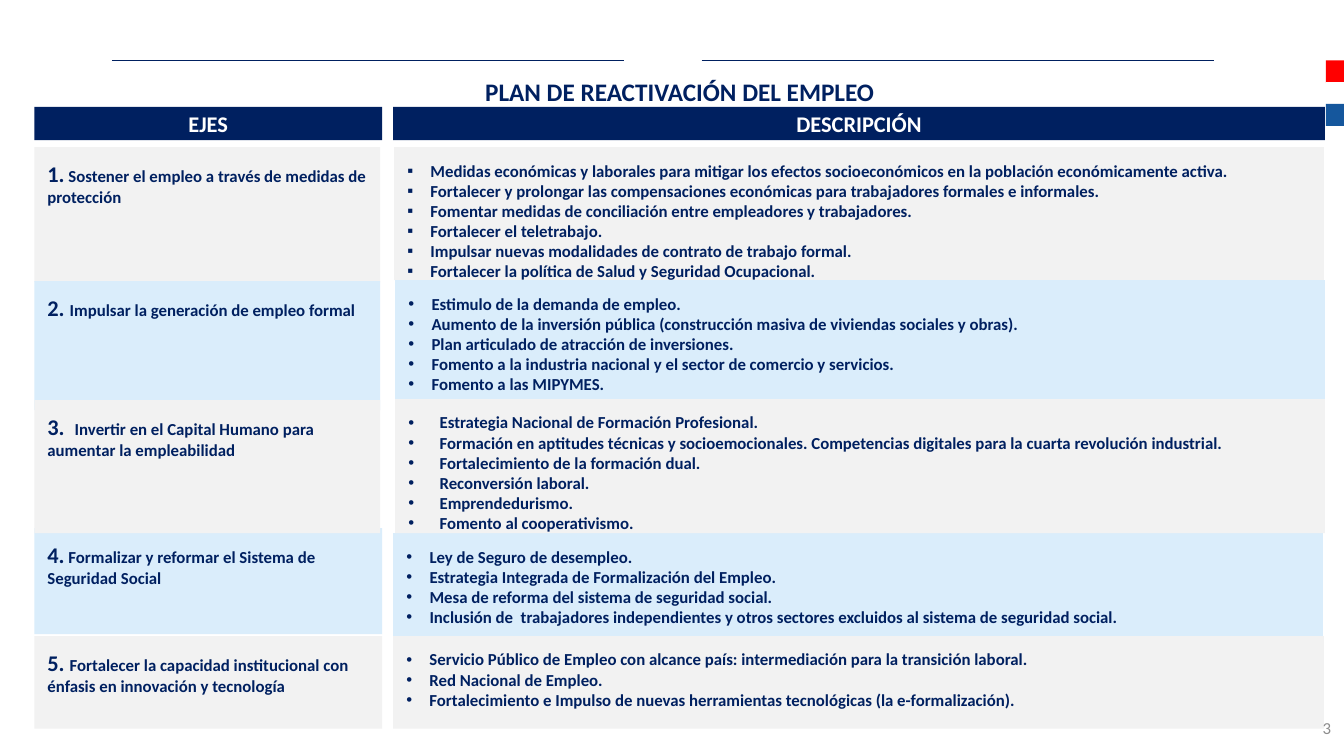
"""Build the employment reactivation plan slide."""
from dataclasses import dataclass

from lxml import etree
from pptx import Presentation
from pptx.dml.color import RGBColor
from pptx.enum import shapes, text
from pptx.oxml import ns
from pptx.util import Inches, Pt


@dataclass(frozen=True)
class Theme:
    """Colours, font and type sizes of the slide."""
    navy: str = "002060"
    pale_blue: str = "DAEDFB"
    pale_grey: str = "F2F2F2"
    white: str = "FFFFFF"
    red: str = "FF0000"
    flag_blue: str = "15579D"
    muted: str = "8C8C8C"
    font: str = "Calibri"
    title: int = 18
    heading: int = 16
    body: int = 12


@dataclass(frozen=True)
class Area:
    """Left, top, width and height in inches."""
    left: float
    top: float
    width: float
    height: float

    def lengths(self) -> list:
        """Return the four measures as lengths."""
        return [Inches(value) for value in (self.left, self.top, self.width, self.height)]


@dataclass(frozen=True)
class Axis:
    """One row of the plan: its heading and its measures."""
    number: str
    heading: str
    fill: str
    heading_area: Area
    measures_area: Area
    measures: tuple
    bullet: str = "•"
    indent: float = 0.23


THEME = Theme()
INSET = 0.13
AXES = (
    Axis("4.", " Formalizar y reformar el Sistema de Seguridad Social", THEME.pale_blue,
         Area(0.34, 5.24, 3.45, 1.05), Area(3.9, 5.29, 9.22, 1.02),
         ("Ley de Seguro de desempleo.",
          "Estrategia Integrada de Formalización del Empleo.",
          "Mesa de reforma del sistema de seguridad social.",
          "Inclusión de  trabajadores independientes y otros sectores excluidos "
          "al sistema de seguridad social.")),
    Axis("1.", " Sostener el empleo a través de medidas de protección", THEME.pale_grey,
         Area(0.34, 1.46, 3.43, 1.34), Area(3.91, 1.46, 9.22, 1.32),
         ("Medidas económicas y laborales para mitigar los efectos socioeconómicos "
          "en la población económicamente activa.",
          "Fortalecer y prolongar las compensaciones económicas para trabajadores "
          "formales e informales.",
          "Fomentar medidas de conciliación entre empleadores y trabajadores.",
          "Fortalecer el teletrabajo.",
          "Impulsar nuevas modalidades de contrato de trabajo formal.",
          "Fortalecer la política de Salud y Seguridad Ocupacional."),
         bullet="▪"),
    Axis("2. ", "Impulsar la generación de empleo formal", THEME.pale_blue,
         Area(0.34, 2.79, 3.43, 1.28), Area(3.92, 2.78, 9.22, 1.19),
         ("Estimulo de la demanda de empleo.",
          "Aumento de la inversión pública (construcción masiva de viviendas sociales y obras).",
          "Plan articulado de atracción de inversiones.",
          "Fomento a la industria nacional y el sector de comercio y servicios.",
          "Fomento a las MIPYMES.")),
    Axis("3.  ", "Invertir en el Capital Humano para aumentar la empleabilidad", THEME.pale_grey,
         Area(0.34, 3.97, 3.43, 1.32), Area(3.92, 3.96, 9.22, 1.33),
         ("Estrategia Nacional de Formación Profesional.",
          "Formación en aptitudes técnicas y socioemocionales. Competencias digitales "
          "para la cuarta revolución industrial.",
          "Fortalecimiento de la formación dual.",
          "Reconversión laboral.",
          "Emprendedurismo.",
          "Fomento al cooperativismo."),
         indent=0.31),
    Axis("5. ", "Fortalecer la capacidad institucional con énfasis en innovación y tecnología",
         THEME.pale_grey, Area(0.34, 6.31, 3.45, 0.92), Area(3.9, 6.31, 9.23, 0.92),
         ("Servicio Público de Empleo con alcance país: intermediación para la transición laboral.",
          "Red Nacional de Empleo.",
          "Fortalecimiento e Impulso de nuevas herramientas tecnológicas (la e-formalización).")),
)
HEADERS = (("EJES", Area(0.34, 1.06, 3.45, 0.33)),
           ("DESCRIPCIÓN", Area(3.9, 1.06, 9.24, 0.33)))


def style_span(span, size: int, color: str = THEME.navy, bold: bool = True) -> None:
    """Set the font of one run."""
    span.font.name = THEME.font
    span.font.size = Pt(size)
    span.font.bold = bold
    span.font.color.rgb = RGBColor.from_string(color)


def add_box(page, area: Area, fill: str):
    """Draw a flat rectangle with its text starting at the top left."""
    box = page.shapes.add_shape(shapes.MSO_SHAPE.RECTANGLE, *area.lengths())
    box.shadow.inherit = False
    box.fill.solid()
    box.fill.fore_color.rgb = RGBColor.from_string(fill)
    box.line.fill.background()
    frame = box.text_frame
    frame.word_wrap = True
    frame.vertical_anchor = text.MSO_ANCHOR.TOP
    frame.margin_left = frame.margin_right = Inches(INSET)
    frame.margin_top = frame.margin_bottom = Inches(INSET)
    frame.paragraphs[0].alignment = text.PP_ALIGN.LEFT
    return box


def set_line(frame, words: str, align, size: int, color: str, bold: bool = True) -> None:
    """Fill a frame with one vertically centred line."""
    frame.text = words
    frame.word_wrap = True
    frame.vertical_anchor = text.MSO_ANCHOR.MIDDLE
    para = frame.paragraphs[0]
    para.alignment = align
    style_span(para.runs[0], size, color, bold)


def add_label(page, area: Area, words: str, align, size: int, color: str, bold: bool) -> None:
    """Add a text box with one line."""
    box = page.shapes.add_textbox(*area.lengths())
    set_line(box.text_frame, words, align, size, color, bold)


def set_bullet(para, bullet: str, indent: float) -> None:
    """Give a paragraph a bullet and a hanging indent."""
    properties = para._p.get_or_add_pPr()
    properties.set("marL", str(Inches(indent)))
    properties.set("indent", str(-Inches(indent)))
    etree.SubElement(properties, ns.qn("a:buFont")).set("typeface", "Arial")
    etree.SubElement(properties, ns.qn("a:buChar")).set("char", bullet)


def add_axis(page, axis: Axis) -> None:
    """Draw the heading and the measures of one axis."""
    para = add_box(page, axis.heading_area, axis.fill).text_frame.paragraphs[0]
    for words, size in ((axis.number, THEME.heading), (axis.heading, THEME.body)):
        span = para.add_run()
        span.text = words
        style_span(span, size)
    frame = add_box(page, axis.measures_area, axis.fill).text_frame
    frame.text = "\n".join(axis.measures)
    for para in frame.paragraphs:
        para.alignment = text.PP_ALIGN.JUSTIFY
        set_bullet(para, axis.bullet, axis.indent)
        style_span(para.runs[0], THEME.body)


def add_rule(page, left: float) -> None:
    """Draw one thin rule above the title."""
    rule = page.shapes.add_connector(shapes.MSO_CONNECTOR.STRAIGHT, Inches(left), Inches(0.6),
                                     Inches(left + 5.08), Inches(0.6))
    rule.line.color.rgb = RGBColor.from_string(THEME.navy)
    rule.line.width = Pt(1)
    etree.SubElement(rule._element.spPr, ns.qn("a:effectLst"))


def main() -> None:
    """Build and save the deck."""
    deck = Presentation()
    deck.slide_width, deck.slide_height = Inches(13.33), Inches(7.5)
    page = deck.slides.add_slide(deck.slide_layouts[6])
    for axis in AXES:
        add_axis(page, axis)
    for words, area in HEADERS:
        box = add_box(page, area, THEME.navy)
        set_line(box.text_frame, words, text.PP_ALIGN.CENTER, THEME.heading, THEME.white)
    for index, color in enumerate((THEME.red, THEME.white, THEME.flag_blue)):
        add_box(page, Area(13.15, 0.6 + index * 0.215, 0.18, 0.22), color)
    for left in (1.11, 6.96):
        add_rule(page, left)
    add_label(page, Area(0.64, 0.72, 12.26, 0.37), "PLAN DE REACTIVACIÓN DEL EMPLEO ",
              text.PP_ALIGN.CENTER, THEME.title, THEME.navy, True)
    add_label(page, Area(10.3, 7.02, 3, 0.4), "3",
              text.PP_ALIGN.RIGHT, THEME.body, THEME.muted, False)
    deck.save("out.pptx")


if __name__ == "__main__":
    main()
